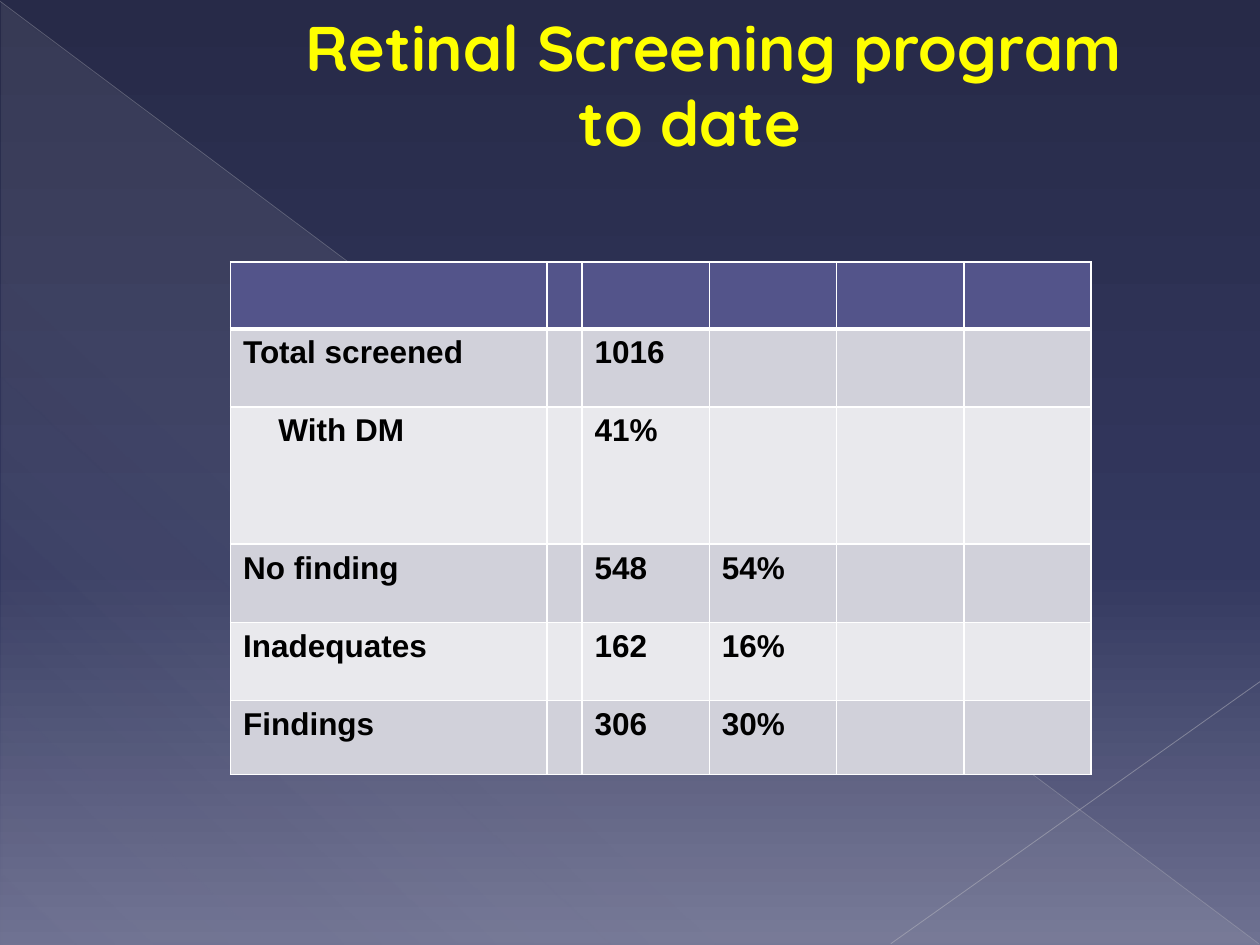
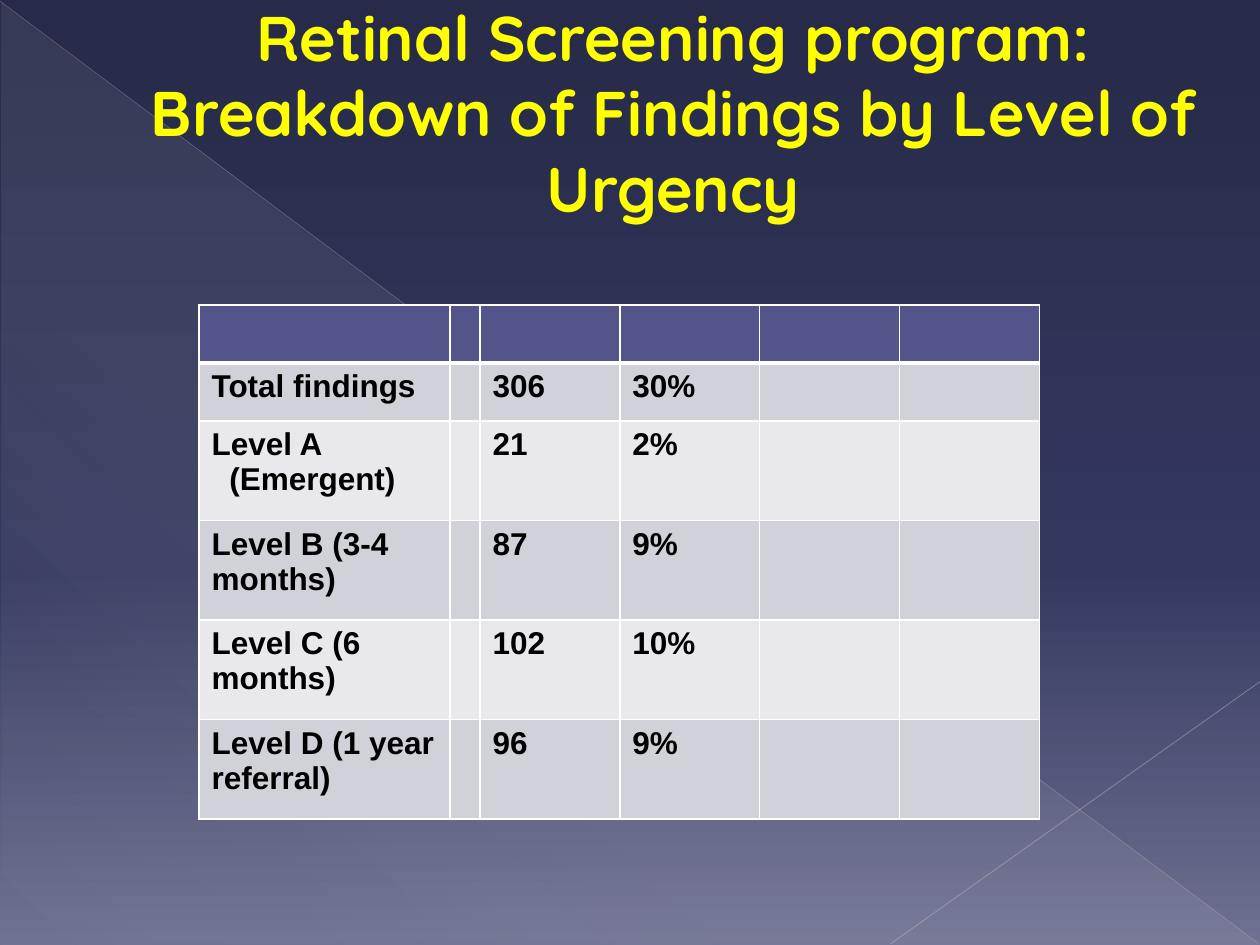
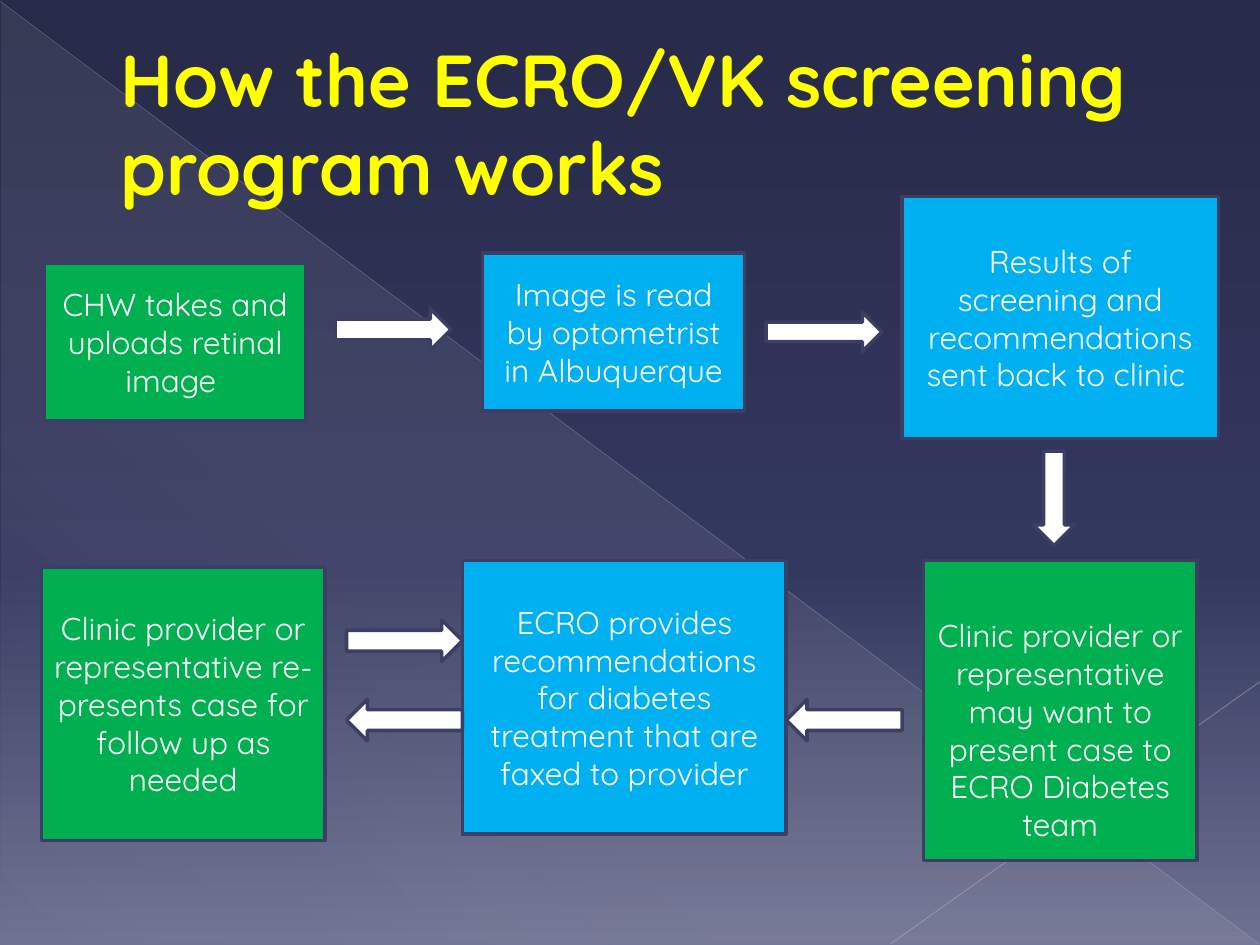
from lxml import etree
from pptx import Presentation
from pptx import util as u
from pptx.dml.color import RGBColor
from pptx.enum import shapes, text
from pptx.oxml.ns import nsdecls, qn
from pptx.oxml import parse_xml

COLORS = {
    "night": "272A48", "dusk": "33385F", "haze": "6E7191", "veil": "DEDEDE",
    "long_ray": "B7B7BE", "short_ray": "BFBFC5", "title": "FFFF00",
    "title_edge": "3A3A60", "header": "53548A", "odd_row": "D1D1DA",
    "even_row": "E9E9ED", "black": "000000", "white": "FFFFFF",
    "edge": "3D3E66", "clinic": "00B050", "remote": "00B0F0",
}
TITLE_FONT = "Quicksand"
TABLE_FONT = "Arial"
SHAPE = shapes.MSO_SHAPE
CENTER = text.PP_ALIGN.CENTER


def rgb(name):
    """Return the named colour."""
    return RGBColor.from_string(COLORS[name])


def lengths(values):
    """Turn a row of numbers into inches."""
    return [u.Inches(value) for value in values]


def set_gradient(fill, element, stops, angle):
    """Replace the fill inside element with a gradient of (position, colour, alpha) stops."""
    fill.solid()
    stop_xml = "".join(
        f'<a:gs pos="{position * 1000}"><a:srgbClr val="{COLORS[color]}">'
        f'<a:alpha val="{alpha * 1000}"/></a:srgbClr></a:gs>'
        for position, color, alpha in stops)
    gradient = parse_xml(
        f'<a:gradFill {nsdecls("a")} rotWithShape="1"><a:gsLst>{stop_xml}</a:gsLst>'
        f'<a:lin ang="{angle * 60000}" scaled="0"/></a:gradFill>')
    solid = next(element.iter(qn("a:solidFill")))
    solid.getparent().replace(solid, gradient)


def line_xml(tag, color, width):
    """Return a solid line element of the given width in points."""
    return parse_xml(
        f'<a:{tag} {nsdecls("a")} w="{int(width * 12700)}"><a:solidFill>'
        f'<a:srgbClr val="{COLORS[color]}"/></a:solidFill></a:{tag}>')


def write_text(frame, content, *, font, size, color, bold=False, align=None,
               margin=0, indents=(), first_indent=0, outline=None):
    """Write one paragraph per line of content in a single format."""
    frame.word_wrap = True
    for index, line in enumerate(content.split("\n")):
        paragraph = frame.paragraphs[0] if index == 0 else frame.add_paragraph()
        paragraph.alignment = align
        paragraph.text = line
        properties = paragraph._p.get_or_add_pPr()
        left = indents[index] if indents else margin
        properties.set("marL", str(u.Inches(left)))
        properties.set("indent", str(u.Inches(first_indent)))
        for run in paragraph.runs:
            run.font.name = font
            run.font.size = u.Pt(size)
            run.font.bold = bold
            run.font.color.rgb = rgb(color)
            if outline:
                run.font._element.insert(0, line_xml("ln", outline, 0.5))


def draw_ray(slide, start, end, color, width, alpha):
    """Draw a faint straight line across the background."""
    ray = slide.shapes.add_connector(
        shapes.MSO_CONNECTOR.STRAIGHT, *lengths(start + end))
    ray.line.color.rgb = rgb(color)
    ray.line.width = u.Pt(width)
    properties = ray._element.spPr
    color_element = next(properties.iter(qn("a:srgbClr")))
    etree.SubElement(color_element, qn("a:alpha"), val=str(alpha * 1000))
    etree.SubElement(properties, qn("a:effectLst"))


def add_slide(presentation):
    """Add a slide with the shared gradient, veil and rays."""
    slide = presentation.slides.add_slide(presentation.slide_layouts[6])
    set_gradient(slide.background.fill, slide._element,
                 [(0, "night", 100), (60, "dusk", 100), (100, "haze", 100)], 90)
    veil = slide.shapes.add_shape(
        SHAPE.RIGHT_TRIANGLE, *lengths((0.01, 0.02, 9.99, 7.48)))
    veil.shadow.inherit = False
    veil.line.fill.background()
    set_gradient(veil.fill, veil._element.spPr,
                 [(0, "veil", 10), (70, "veil", 8), (100, "veil", 1)], 133)
    draw_ray(slide, (0, 0.01), (9.99, 7.49), "long_ray", 0.39, 35)
    draw_ray(slide, (10, 5.41), (7.07, 7.49), "short_ray", 0.47, 45)
    return slide


def add_title(slide, box, content, size=36, align=CENTER, first_indent=0):
    """Write the slide title in its box."""
    frame = slide.shapes.add_textbox(*lengths(box)).text_frame
    frame.vertical_anchor = text.MSO_ANCHOR.MIDDLE
    write_text(frame, content, font=TITLE_FONT, size=size, color="title",
               bold=True, align=align, margin=0.53, first_indent=first_indent,
               outline="title_edge")


def style_cell(cell, row):
    """Give a cell its band colour and white borders."""
    band = "header" if row == 0 else "odd_row" if row % 2 else "even_row"
    cell.fill.solid()
    cell.fill.fore_color.rgb = rgb(band)
    widths = {"lnL": 1, "lnR": 1, "lnT": 3 if row == 1 else 1,
              "lnB": 3 if row == 0 else 1}
    for index, (tag, width) in enumerate(widths.items()):
        cell._tc.tcPr.insert(index, line_xml(tag, "white", width))


def add_findings_table(slide, box, columns, heights, rows, indents):
    """Draw a banded table with an empty header; indents maps labels to line indents."""
    table = slide.shapes.add_table(
        len(heights), len(columns), *lengths(box)).table
    for column, width in zip(table.columns, lengths(columns)):
        column.width = width
    for row, height in zip(table.rows, lengths(heights)):
        row.height = height
    for row_index, row in enumerate(table.rows):
        for cell in row.cells:
            style_cell(cell, row_index)
    for row_index, (label, *values) in enumerate(rows, start=1):
        for column_index, content in enumerate([label, "", *values]):
            if content:
                write_text(table.cell(row_index, column_index).text_frame, content,
                           font=TABLE_FONT, size=18, color="black", bold=True,
                           indents=indents.get(content, ()))


def add_block(slide, kind, box, color):
    """Add a filled shape with the shared dark edge."""
    block = slide.shapes.add_shape(kind, *lengths(box))
    block.shadow.inherit = False
    block.fill.solid()
    block.fill.fore_color.rgb = rgb(color)
    block.line.color.rgb = rgb("edge")
    block.line.width = u.Pt(2)
    return block


def add_workflow(slide, left, top):
    """Draw the screening steps and their arrows from the given corner."""
    steps = [
        ((0.02, 0.53, 2.08, 1.25), "clinic", "CHW takes and uploads retinal image ", 0.05),
        ((3.5, 0.45, 2.08, 1.25), "remote",
         "Image is read by optometrist in Albuquerque", 0.05),
        ((6.83, 0, 2.51, 1.92), "remote",
         "Results of screening and recommendations sent back to clinic ", 0.05),
        ((7, 2.89, 2.17, 2.38), "clinic",
         "Clinic provider or representative may want to present case to ECRO Diabetes team",
         0.35),
        ((3.34, 2.89, 2.57, 2.17), "remote",
         "ECRO provides recommendations for diabetes treatment that are faxed to provider",
         0.05),
        ((0, 2.94, 2.25, 2.17), "clinic",
         "Clinic provider or representative re-presents case for follow up as needed", 0.05),
    ]
    arrows = [
        (SHAPE.RIGHT_ARROW, (2.33, 0.89, 0.92, 0.33), 0),
        (SHAPE.RIGHT_ARROW, (5.75, 0.92, 0.92, 0.31), 0),
        (SHAPE.DOWN_ARROW, (7.87, 2.02, 0.33, 0.75), 0),
        (SHAPE.RIGHT_ARROW, (5.91, 3.99, 0.92, 0.33), 180),
        (SHAPE.RIGHT_ARROW, (2.42, 3.99, 0.92, 0.33), 180),
        (SHAPE.RIGHT_ARROW, (2.42, 3.36, 0.92, 0.33), 0),
    ]
    for (x, y, width, height), color, content, top_inset in steps:
        step = add_block(slide, SHAPE.FLOWCHART_PROCESS,
                         (left + x, top + y, width, height), color)
        step.text_frame.margin_top = u.Inches(top_inset)
        step.text_frame.vertical_anchor = text.MSO_ANCHOR.MIDDLE
        write_text(step.text_frame, content, font=TITLE_FONT, size=18,
                   color="white", align=CENTER)
    for kind, (x, y, width, height), rotation in arrows:
        arrow = add_block(slide, kind, (left + x, top + y, width, height), "white")
        arrow.rotation = rotation


def main():
    """Build the three slides and save them."""
    presentation = Presentation()
    presentation.slide_width, presentation.slide_height = lengths((10, 7.5))

    slide = add_slide(presentation)
    add_title(slide, (0.46, 0, 9.5, 1.33),
              "Retinal Screening program\vto date", first_indent=0.38)
    add_findings_table(
        slide, (1.83, 2.08, 6.83, 4.08), [2.51, 0.28] + [1.01] * 4,
        [0.53, 0.62, 1.09, 0.62, 0.62, 0.59],
        [("Total screened", "1016"), ("With DM", "41%"), ("No finding", "548", "54%"),
         ("Inadequates", "162", "16%"), ("Findings", "306", "30%")],
        {"With DM": [0.28]})

    slide = add_slide(presentation)
    add_title(slide, (0.33, 0, 9.5, 1.77),
              "Retinal Screening program: Breakdown of Findings by Level of Urgency")
    add_findings_table(
        slide, (1.58, 2.42, 6.67, 4.08), [1.99, 0.23] + [1.11] * 4,
        [0.46] * 2 + [0.79] * 4,
        [("Total findings", "306", "30%"), ("Level A\n(Emergent)", "21", "2%"),
         ("Level B (3-4 months)", "87", "9%"), ("Level C (6 months)", "102", "10%"),
         ("Level D (1 year referral)", "96", "9%")],
        {"Level A\n(Emergent)": [0, 0.14]})

    slide = add_slide(presentation)
    add_workflow(slide, 0.33, 1.56)
    add_title(slide, (0.33, 0.17, 9.5, 1.6),
              "How the ECRO/VK screening program works", size=42,
              align=text.PP_ALIGN.LEFT)

    presentation.save("out.pptx")


if __name__ == "__main__":
    main()
